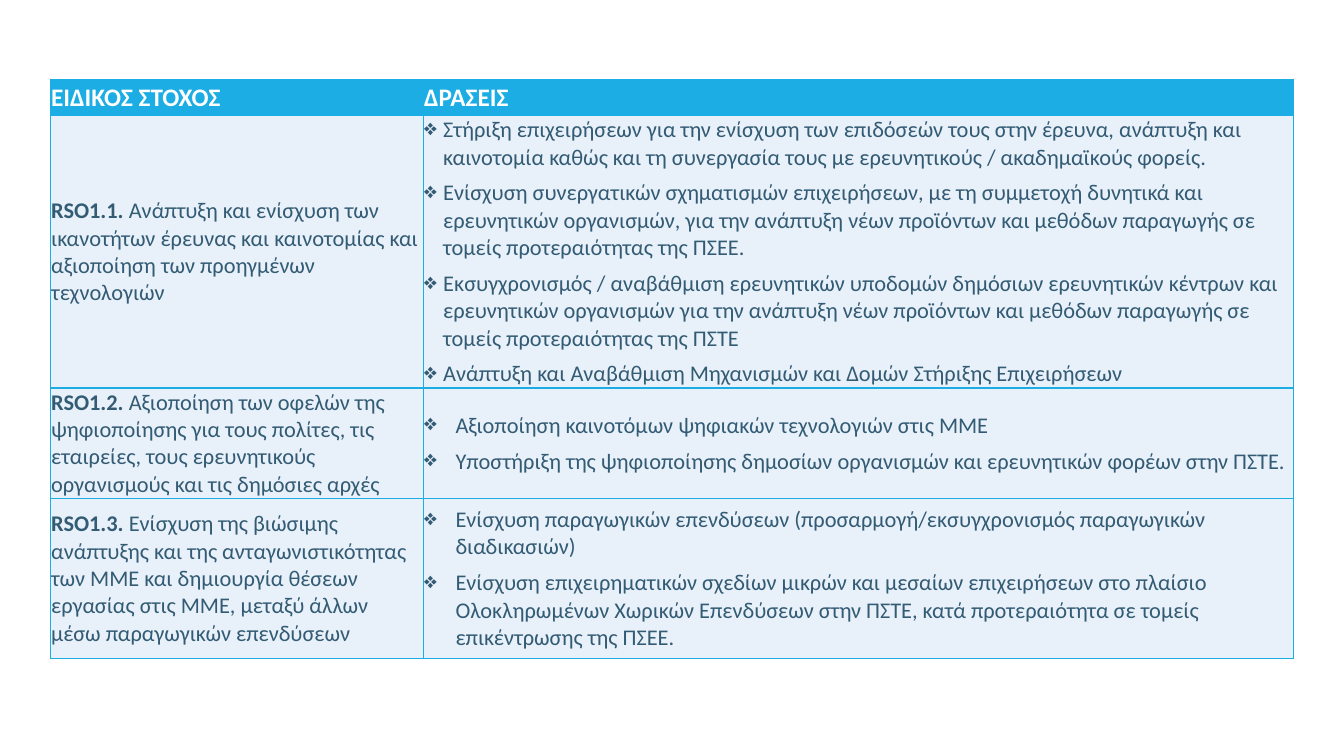
from pptx import Presentation
from pptx.dml.color import RGBColor
from pptx.enum.text import MSO_ANCHOR
from pptx.oxml import parse_xml
from pptx.oxml.ns import nsdecls
from pptx.util import Cm, Pt

MIDDLE = MSO_ANCHOR.MIDDLE
BLUE = RGBColor(0x1C, 0xAD, 0xE4)
PALE = RGBColor(0xE8, 0xF1, 0xFA)
SLATE = RGBColor(0x33, 0x5B, 0x74)
WHITE = RGBColor(0xFF, 0xFF, 0xFF)

COLUMN_WIDTHS = [9.4, 21.92]
ROW_HEIGHTS = [0.91, 5.18, 2.39, 4.04]
HEADINGS = ["ΕΙΔΙΚΟΣ ΣΤΟΧΟΣ", "ΔΡΑΣΕΙΣ"]

# Each objective: code, description, bullet indent in cm, actions
OBJECTIVES = [
    ("RSO1.1. ",
     "Ανάπτυξη και ενίσχυση των ικανοτήτων έρευνας και καινοτομίας και "
     "αξιοποίηση των προηγμένων τεχνολογιών",
     0.48,
     ["Στήριξη επιχειρήσεων για την ενίσχυση των επιδόσεών τους στην έρευνα, ανάπτυξη και "
      "καινοτομία καθώς και τη συνεργασία τους με ερευνητικούς / ακαδημαϊκούς φορείς.",
      "Ενίσχυση συνεργατικών σχηματισμών επιχειρήσεων, με τη συμμετοχή δυνητικά και "
      "ερευνητικών οργανισμών, για την ανάπτυξη νέων προϊόντων και μεθόδων παραγωγής σε "
      "τομείς προτεραιότητας της ΠΣΕΕ.",
      "Εκσυγχρονισμός / αναβάθμιση ερευνητικών υποδομών δημόσιων ερευνητικών κέντρων και "
      "ερευνητικών οργανισμών για την ανάπτυξη νέων προϊόντων και μεθόδων παραγωγής σε "
      "τομείς προτεραιότητας της ΠΣΤΕ",
      "Ανάπτυξη και Αναβάθμιση Μηχανισμών και Δομών Στήριξης Επιχειρήσεων"]),
    ("RSO1.2. ",
     "Αξιοποίηση των οφελών της ψηφιοποίησης για τους πολίτες, τις εταιρείες, τους "
     "ερευνητικούς οργανισμούς και τις δημόσιες αρχές",
     0.79,
     ["Αξιοποίηση καινοτόμων ψηφιακών τεχνολογιών στις ΜΜΕ",
      "Υποστήριξη της ψηφιοποίησης δημοσίων οργανισμών και ερευνητικών φορέων στην ΠΣΤΕ."]),
    ("RSO1.3. ",
     "Ενίσχυση της βιώσιμης ανάπτυξης και της ανταγωνιστικότητας των ΜΜΕ και δημιουργία "
     "θέσεων εργασίας στις ΜΜΕ, μεταξύ άλλων μέσω παραγωγικών επενδύσεων",
     0.79,
     ["Ενίσχυση παραγωγικών επενδύσεων (προσαρμογή/εκσυγχρονισμός παραγωγικών διαδικασιών)",
      "Ενίσχυση επιχειρηματικών σχεδίων μικρών και μεσαίων επιχειρήσεων στο πλαίσιο "
      "Ολοκληρωμένων Χωρικών Επενδύσεων στην ΠΣΤΕ, κατά προτεραιότητα σε τομείς "
      "επικέντρωσης της ΠΣΕΕ."]),
]


class SlideBuilder:
    """Holds the shared style and the current slide."""

    body = {"name": "Calibri", "size": Pt(16), "bold": False}
    heading = {"name": "Calibri", "size": Pt(18), "bold": True}
    cell_format = {"vertical_anchor": MIDDLE, "margin_left": Cm(0.02),
                   "margin_right": Cm(0.02), "margin_top": Cm(0.02), "margin_bottom": 0}

    def __init__(self, page):
        self.page = page

    def table(self, left, top, widths, heights):
        frame = self.page.shapes.add_table(
            len(heights), len(widths), Cm(left), Cm(top), Cm(sum(widths)), Cm(sum(heights)))
        grid = frame.table
        for column, width in zip(grid.columns, widths):
            column.width = Cm(width)
        for row, height in zip(grid.rows, heights):
            row.height = Cm(height)
        return grid

    def cell(self, cell, fill):
        for key, value in self.cell_format.items():
            setattr(cell, key, value)
        properties = cell._tc.get_or_add_tcPr()
        for side in ("lnL", "lnR", "lnT", "lnB"):
            properties.append(parse_xml(
                f'<a:{side} {nsdecls("a")} w="12700"><a:solidFill>'
                f'<a:srgbClr val="{BLUE}"/></a:solidFill></a:{side}>'))
        cell.fill.solid()
        cell.fill.fore_color.rgb = fill
        return cell.text_frame

    def span(self, para, text, style, color, **changes):
        span = para.add_run()
        span.text = text
        for key, value in {**style, **changes}.items():
            setattr(span.font, key, value)
        span.font.color.rgb = color

    def bullets(self, box, items, indent):
        for index, item in enumerate(items):
            para = box.add_paragraph() if index else box.paragraphs[0]
            properties = para._p.get_or_add_pPr()
            properties.set("marL", str(Cm(indent)))
            properties.set("indent", str(-Cm(indent)))
            properties.append(parse_xml(f'<a:buChar {nsdecls("a")} char="❖"/>'))
            para.space_before = Pt(6 if index else 0)
            self.span(para, item, self.body, SLATE)


def main():
    deck = Presentation()
    deck.slide_width, deck.slide_height = Cm(33.87), Cm(19.05)
    builder = SlideBuilder(deck.slides.add_slide(deck.slide_layouts[6]))
    grid = builder.table(1.27, 2, COLUMN_WIDTHS, ROW_HEIGHTS)

    # Header row
    for column, heading in enumerate(HEADINGS):
        box = builder.cell(grid.cell(0, column), BLUE)
        builder.span(box.paragraphs[0], heading, builder.heading, WHITE)

    # Objectives and their actions
    for row, (code, description, indent, actions) in enumerate(OBJECTIVES, start=1):
        para = builder.cell(grid.cell(row, 0), PALE).paragraphs[0]
        builder.span(para, code, builder.body, SLATE, bold=True)
        builder.span(para, description, builder.body, SLATE)
        builder.bullets(builder.cell(grid.cell(row, 1), PALE), actions, indent)

    deck.save("out.pptx")


if __name__ == "__main__":
    main()
